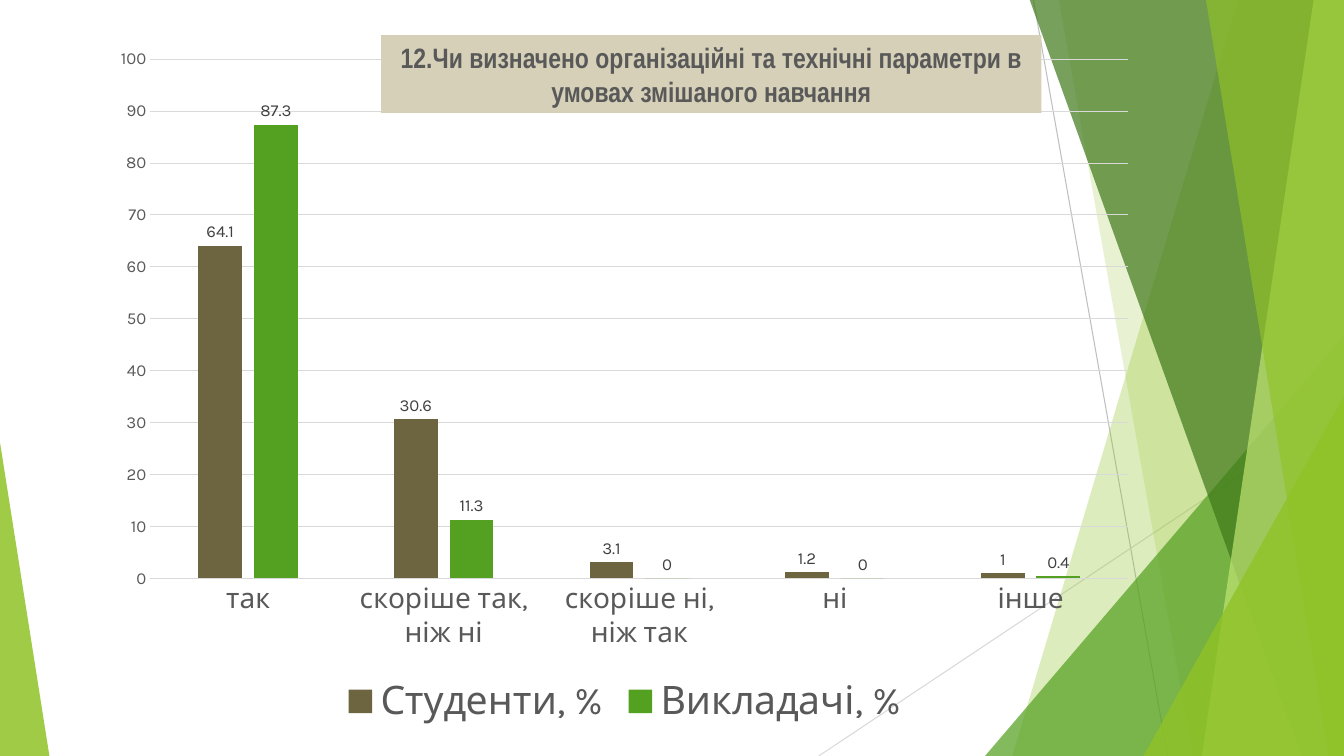
from lxml import etree
from pptx import Presentation
from pptx.chart.data import CategoryChartData
from pptx.dml.color import RGBColor
from pptx.enum.chart import XL_CHART_TYPE as ChartType
from pptx.enum.chart import XL_LABEL_POSITION as LabelPosition
from pptx.enum.chart import XL_LEGEND_POSITION as LegendPosition
from pptx.enum.chart import XL_TICK_MARK as TickMark
from pptx.enum.shapes import MSO_CONNECTOR as Connector
from pptx.enum.shapes import MSO_SHAPE as Shape
from pptx.enum.text import MSO_ANCHOR as Anchor
from pptx.enum.text import PP_ALIGN as Align
from pptx.oxml.ns import qn
from pptx.util import Inches, Pt

WIDTH, HEIGHT = 13.33, 7.5
GREY, PALE_GREY = "595959", "D9D9D9"
LIME, GREEN, OLIVE = "90C226", "54A021", "6D6540"


def color(code):
    return RGBColor.from_string(code)


def paint(shape, code, opacity=100):
    shape.shadow.inherit = False
    shape.line.fill.background()
    shape.fill.solid()
    shape.fill.fore_color.rgb = color(code)
    if opacity < 100:
        tint = shape.fill._xPr.find(qn("a:solidFill"))[0]
        etree.SubElement(tint, qn("a:alpha"), val=str(opacity * 1000))


def style_font(font, size, code, name="Karla"):
    font.size = Pt(size)
    font.name = name
    font.color.rgb = color(code)


def style_line(line, code):
    line.color.rgb = color(code)
    line.width = Pt(0.75)


def add_ray(page, start, end, code):
    ray = page.shapes.add_connector(Connector.STRAIGHT, *map(Inches, start + end))
    style_line(ray.line, code)
    etree.SubElement(ray._element.spPr, qn("a:effectLst"))


def add_band(page, box, top_left, bottom_left, code, opacity):
    left, top, width, height = box
    right, bottom = left + width, top + height
    corners = [(top_left, top), (right, top), (right, bottom), (bottom_left, bottom)]
    points = [(Inches(x), Inches(y)) for x, y in corners]
    builder = page.shapes.build_freeform(*points[0])
    builder.add_line_segments(points[1:], close=True)
    paint(builder.convert_to_shape(), code, opacity)


def add_triangle(page, box, apex, code, opacity):
    triangle = page.shapes.add_shape(Shape.ISOSCELES_TRIANGLE, *map(Inches, box))
    triangle.adjustments[0] = apex
    paint(triangle, code, opacity)


def add_backdrop(page, box):
    left, top, width, height = box
    right, bottom = left + width, top + height
    band_box = (left, top - 0.01, width, height + 0.01)

    def corner(across, tall, code, opacity):
        area = (right - across, bottom - tall, across, tall)
        add_triangle(page, area, 1, code, opacity)

    add_ray(page, (10.25, top), (11.58, bottom), "BFBFBF")
    add_ray(page, (right, 4.03), (8.12, bottom), PALE_GREY)
    add_band(page, band_box, 12.28, 10.04, LIME, 30)
    add_band(page, band_box, 10.5, 11.83, LIME, 20)
    corner(3.56, 4.17, GREEN, 72)
    add_band(page, band_box, 10.21, 12.91, "3F7819", 70)
    add_band(page, band_box, 13.03, 11.92, "C0E474", 70)
    add_band(page, band_box, 11.96, 13.18, LIME, 65)
    corner(1.99, 3.57, LIME, 80)
    add_triangle(page, (left, bottom - 3.11, 0.49, 3.11), 0, LIME, 85)


def style_axes(chart):
    answers, percents = chart.category_axis, chart.value_axis
    for axis, size in ((answers, 20), (percents, 12)):
        axis.major_tick_mark = axis.minor_tick_mark = TickMark.NONE
        style_font(axis.tick_labels.font, size, GREY)
    answers.has_major_gridlines = False
    style_line(answers.format.line, PALE_GREY)
    percents.minimum_scale, percents.maximum_scale = 0, 100
    percents.major_unit = 10
    percents.format.line.fill.background()
    percents.has_major_gridlines = True
    style_line(percents.major_gridlines.format.line, PALE_GREY)


def add_answers_chart(page, box):
    data = CategoryChartData()
    data.categories = ["так", "скоріше так, ніж ні", "скоріше ні, ніж так", "ні", "інше"]
    data.add_series("Студенти, %", [64.1, 30.6, 3.1, 1.2, 1])
    data.add_series("Викладачі, %", [87.3, 11.3, 0, 0, 0.4])
    frame = page.shapes.add_chart(ChartType.COLUMN_CLUSTERED, *map(Inches, box), data)
    chart = frame.chart
    style_font(chart.font, 10, "000000")
    chart.has_title = False
    chart.has_legend = True
    chart.legend.position = LegendPosition.BOTTOM
    chart.legend.include_in_layout = False
    style_font(chart.legend.font, 28, GREY)
    style_axes(chart)

    plot = chart.plots[0]
    plot.gap_width, plot.overlap = 219, -27
    plot.vary_by_categories = False
    for series, code in zip(plot.series, (OLIVE, GREEN)):
        series.invert_if_negative = False
        series.format.fill.solid()
        series.format.fill.fore_color.rgb = color(code)
        labels = series.data_labels
        labels.show_value = True
        labels.position = LabelPosition.OUTSIDE_END
        style_font(labels.font, 12, "404040")


def add_question(page, box):
    banner = page.shapes.add_shape(Shape.RECTANGLE, *map(Inches, box))
    paint(banner, "D6D0B8")
    text = banner.text_frame
    text.word_wrap = True
    text.vertical_anchor = Anchor.MIDDLE
    para = text.paragraphs[0]
    para.alignment = Align.CENTER
    span = para.add_run()
    span.text = "12.Чи визначено організаційні та технічні параметри в умовах змішаного навчання"
    style_font(span.font, 20, GREY, "Arial Narrow")
    span.font.bold = True


def main():
    deck = Presentation()
    deck.slide_width, deck.slide_height = Inches(WIDTH), Inches(HEIGHT)
    page = deck.slides.add_slide(deck.slide_layouts[6])
    add_backdrop(page, (0, 0, WIDTH, HEIGHT))
    add_answers_chart(page, (0.99, 0.35, 10.41, 6.91))
    add_question(page, (3.78, 0.35, 6.55, 0.77))
    deck.save("out.pptx")


if __name__ == "__main__":
    main()
